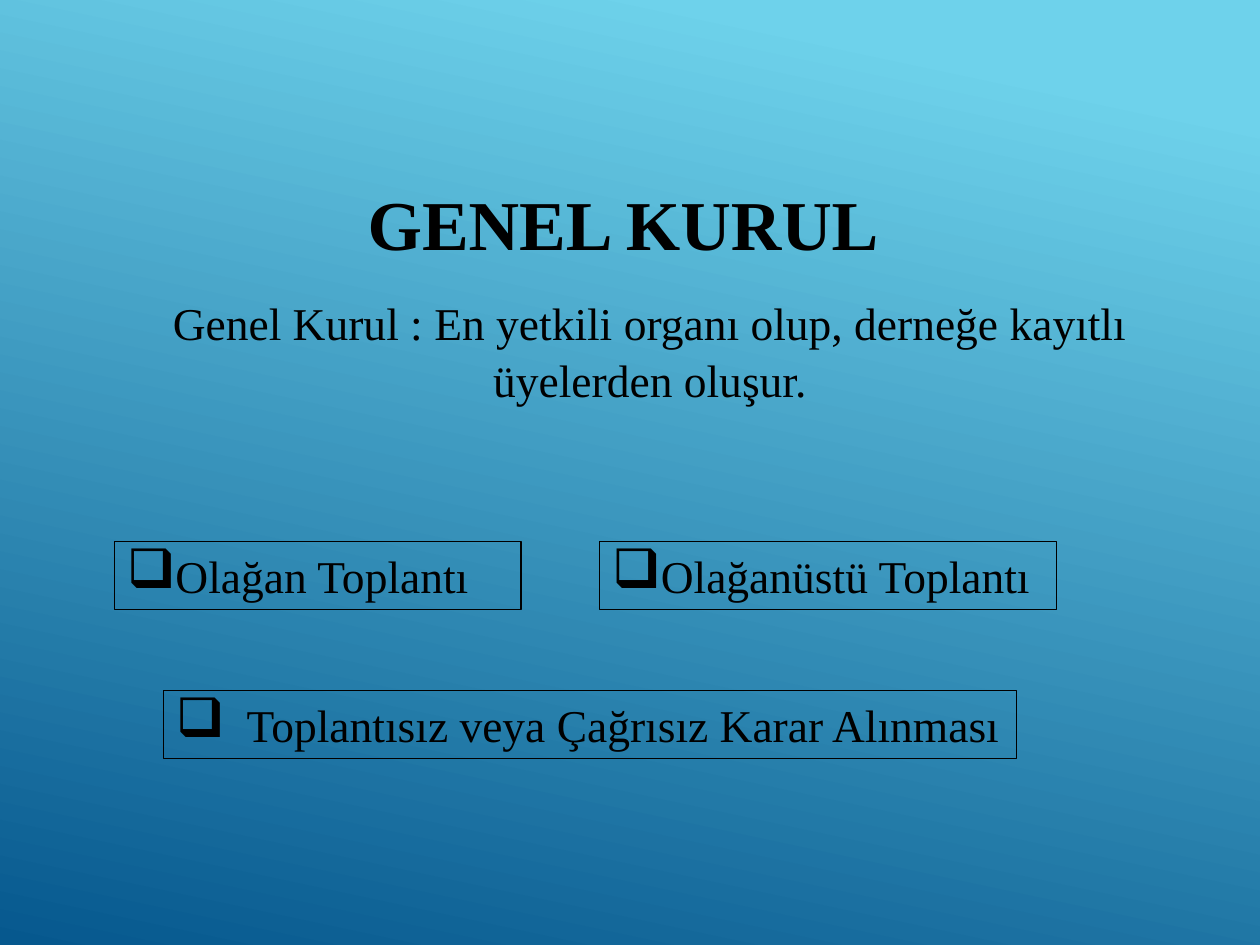
from dataclasses import dataclass

from lxml.etree import SubElement
from pptx import Presentation
from pptx.dml.color import RGBColor
from pptx.enum.shapes import MSO_SHAPE as Shape
from pptx.enum.text import MSO_ANCHOR as Anchor, PP_ALIGN as Align
from pptx.oxml.ns import qn
from pptx.util import Pt


@dataclass(frozen=True)
class Theme:
    """Colours and type sizes of the slide."""
    font: str = "Times New Roman"
    ink: RGBColor = RGBColor(0, 0, 0)
    sky: RGBColor = RGBColor(0x6E, 0xD2, 0xEB)
    deep: RGBColor = RGBColor(0x06, 0x58, 0x8E)
    title: float = 40
    body: float = 26


@dataclass(frozen=True)
class Meeting:
    """A framed kind of decision, with lengths in points."""
    text: str
    left: float
    top: float
    width: float
    indent: float = 0


THEME = Theme()
BOX_HEIGHT = 38.9
ROW_1, ROW_2 = 309.6, 394.6
MEETINGS = (
    Meeting("Olağan Toplantı", 65.4, ROW_1, 232.4),
    Meeting("Olağanüstü Toplantı", 342.8, ROW_1, 261),
    Meeting("Toplantısız veya Çağrısız Karar Alınması", 93.4, ROW_2, 487.6, 40.5),
)


def write(s, text: str, *, size: float = THEME.body, bold: bool = False,
          align=Align.LEFT, anchor=Anchor.TOP, inset: float = 3.6,
          spacing: float = 1.0):
    """Put one formatted paragraph in a shape and return it."""
    tf = s.text_frame
    tf.word_wrap = True
    tf.vertical_anchor = anchor
    tf.margin_left = tf.margin_right = Pt(7.2)
    tf.margin_top = tf.margin_bottom = Pt(inset)
    p = tf.paragraphs[0]
    p.alignment = align
    p.line_spacing = spacing
    p.space_before = p.space_after = Pt(0)
    r = p.add_run()
    r.text = text
    r.font.name = THEME.font
    r.font.size = Pt(size)
    r.font.bold = bold
    r.font.color.rgb = THEME.ink
    return p


def add_bullet(p, indent: float) -> None:
    """Give a paragraph a large box bullet with a hanging indent."""
    pr = p._p.get_or_add_pPr()
    pr.set("marL", str(Pt(indent)))
    pr.set("indent", str(-Pt(indent)))
    color = SubElement(pr, qn("a:buClr"))
    SubElement(color, qn("a:srgbClr"), val=str(THEME.ink))
    SubElement(pr, qn("a:buSzPct"), val="120000")
    SubElement(pr, qn("a:buChar"), char="❑")


def draw_meeting(slide, m: Meeting) -> None:
    """Draw a framed, bulleted line."""
    s = slide.shapes.add_shape(Shape.RECTANGLE, Pt(m.left), Pt(m.top),
                               Pt(m.width), Pt(BOX_HEIGHT))
    s.shadow.inherit = False
    s.fill.background()
    s.line.color.rgb = THEME.ink
    s.line.width = Pt(0.75)
    add_bullet(write(s, m.text), m.indent)


def paint_background(slide) -> None:
    """Fill the slide with a slanted gradient."""
    fill = slide.background.fill
    fill.gradient()
    fill.gradient_angle = 258
    stops = ((0.1, THEME.sky), (1.0, THEME.deep))
    for stop, (position, color) in zip(fill.gradient_stops, stops):
        stop.position = position
        stop.color.rgb = color


def main() -> None:
    """Build and save the slide."""
    prs = Presentation()
    prs.slide_width, prs.slide_height = Pt(720), Pt(540)
    slide = prs.slides.add_slide(prs.slide_layouts[5])
    paint_background(slide)
    title = slide.shapes.title
    title.left, title.top, title.width, title.height = Pt(54), Pt(100), Pt(612), Pt(52.6)
    write(title, "GENEL KURUL ", size=THEME.title, bold=True,
          align=Align.CENTER, anchor=Anchor.BOTTOM, inset=1.2)
    body = slide.shapes.add_textbox(Pt(65.5), Pt(162), Pt(612), Pt(73.4))
    write(body, "Genel Kurul : En yetkili organı olup, derneğe kayıtlı "
          "üyelerden oluşur.", align=Align.CENTER, inset=5, spacing=1.05)
    for m in MEETINGS:
        draw_meeting(slide, m)
    prs.save("out.pptx")


if __name__ == "__main__":
    main()
